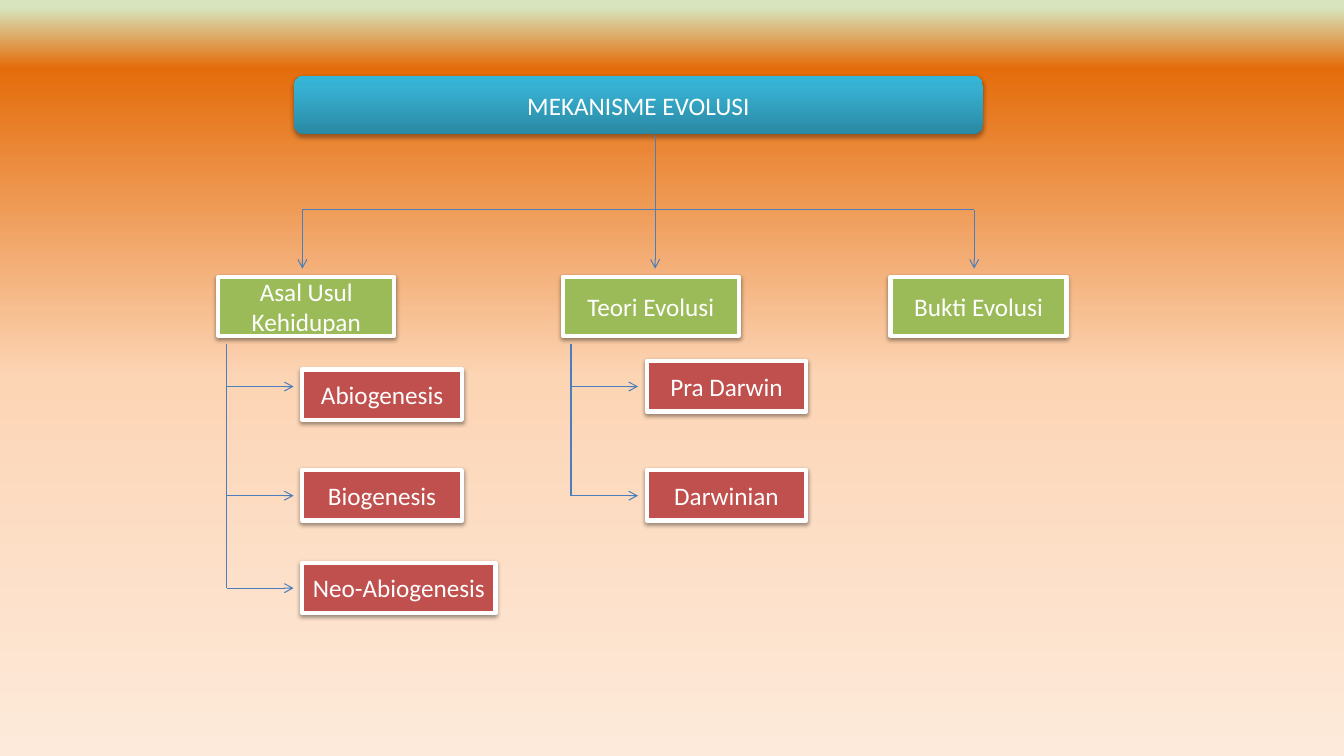
from lxml import etree
from pptx import Presentation
from pptx.dml.color import RGBColor
from pptx.enum.shapes import MSO_CONNECTOR, MSO_SHAPE
from pptx.enum.text import MSO_ANCHOR, PP_ALIGN
from pptx.oxml.ns import qn
from pptx.util import Cm, Pt

ROUNDED = MSO_SHAPE.ROUNDED_RECTANGLE
RECTANGLE = MSO_SHAPE.RECTANGLE
STRAIGHT = MSO_CONNECTOR.STRAIGHT
MIDDLE = MSO_ANCHOR.MIDDLE
CENTER = PP_ALIGN.CENTER

COLORS = {
    "white": "FFFFFF",
    "topic": "9BBB59",
    "subtopic": "C0504D",
    "connector": "4B7EBC",
    "shadow": "000000",
}
BACKGROUND_STOPS = [(0, "D7E4BD"), (1, "D7E4BD"), (9, "E46C0A"), (50, "FCD5B5"), (100, "FDEADA")]
TITLE_STOPS = [(0, "2A88A2"), (80, "37B1D2"), (100, "34B4D6")]
FONT_FORMAT = {"name": "Calibri", "size": Pt(18)}
FRAME_FORMAT = {"word_wrap": True, "vertical_anchor": MIDDLE}

TRUNK_X, TRUNK_TOP, BRANCH_Y, BRANCH_END = 16.51, 3.39, 5.29, 6.77
TOPIC_TOP, TOPIC_WIDTH, TOPIC_HEIGHT = 6.98, 4.44, 1.48
SUBTOPIC_HEIGHT = 1.27
SPINE_OFFSET, ARROW_END_OFFSET, SUBTOPIC_OFFSET = 0.21, 1.9, 2.12
SPINE_TOP = 8.68

TOPICS = [
    ("Asal Usul Kehidupan", 5.5, 7.62, [
        ("Abiogenesis", 9.31, 4.02, 9.74),
        ("Biogenesis", 11.85, 4.02, 12.49),
        ("Neo-Abiogenesis", 14.18, 4.87, 14.82),
    ]),
    ("Teori Evolusi", 14.18, TRUNK_X, [
        ("Pra Darwin", 9.1, 4.02, 9.74),
        ("Darwinian", 11.85, 4.02, 12.49),
    ]),
    ("Bukti Evolusi", 22.44, 24.55, []),
]


def apply_format(target, values):
    for name, value in values.items():
        setattr(target, name, value)


def add_color(parent, color):
    return etree.SubElement(parent, qn("a:srgbClr"), val=color)


def set_gradient(fill, properties, stops, angle):
    fill.gradient()
    gradient = properties.find(".//" + qn("a:gradFill"))
    for child in list(gradient):
        gradient.remove(child)
    stop_list = etree.SubElement(gradient, qn("a:gsLst"))
    for position, color in stops:
        stop = etree.SubElement(stop_list, qn("a:gs"), pos=str(position * 1000))
        add_color(stop, color)
    etree.SubElement(gradient, qn("a:lin"), ang=str(angle * 60000), scaled="0")


def set_shadow(shape, distance, opacity):
    shape.shadow.inherit = False
    effects = shape._element.spPr.find(qn("a:effectLst"))
    shadow = etree.SubElement(
        effects, qn("a:outerShdw"), blurRad=str(Pt(3.1)), dist=str(Pt(distance)),
        dir="5400000", rotWithShape="0")
    color = add_color(shadow, COLORS["shadow"])
    etree.SubElement(color, qn("a:alpha"), val=str(opacity * 1000))


def add_box(slide, kind, text, left, top, width, height):
    shape = slide.shapes.add_shape(kind, Cm(left), Cm(top), Cm(width), Cm(height))
    apply_format(shape.text_frame, FRAME_FORMAT)
    paragraph = shape.text_frame.paragraphs[0]
    paragraph.alignment = CENTER
    run = paragraph.add_run()
    run.text = text
    apply_format(run.font, FONT_FORMAT)
    run.font.color.rgb = RGBColor.from_string(COLORS["white"])
    return shape


def add_title(slide, text):
    shape = add_box(slide, ROUNDED, text, 7.41, 1.91, 17.36, 1.48)
    set_gradient(shape.fill, shape._element.spPr, TITLE_STOPS, 270)
    shape.line.fill.background()
    set_shadow(shape, 1.8, 35)


def add_framed_box(slide, text, color, left, top, width, height):
    shape = add_box(slide, RECTANGLE, text, left, top, width, height)
    shape.fill.solid()
    shape.fill.fore_color.rgb = RGBColor.from_string(COLORS[color])
    shape.line.color.rgb = RGBColor.from_string(COLORS["white"])
    shape.line.width = Pt(3)
    set_shadow(shape, 1.6, 38)


def add_line(slide, start_x, start_y, end_x, end_y, arrow=False):
    connector = slide.shapes.add_connector(
        STRAIGHT, Cm(start_x), Cm(start_y), Cm(end_x), Cm(end_y))
    connector.line.color.rgb = RGBColor.from_string(COLORS["connector"])
    connector.line.width = Pt(0.75)
    if arrow:
        etree.SubElement(connector.line._get_or_add_ln(), qn("a:tailEnd"), type="arrow")
    etree.SubElement(connector._element.spPr, qn("a:effectLst"))


def add_topic(slide, text, left, arrow_x, subtopics):
    add_line(slide, arrow_x, BRANCH_Y, arrow_x, BRANCH_END, arrow=True)
    add_framed_box(slide, text, "topic", left, TOPIC_TOP, TOPIC_WIDTH, TOPIC_HEIGHT)
    spine_x = left + SPINE_OFFSET
    if subtopics:
        add_line(slide, spine_x, SPINE_TOP, spine_x, subtopics[-1][-1])
    for name, top, width, arrow_y in subtopics:
        add_line(slide, spine_x, arrow_y, left + ARROW_END_OFFSET, arrow_y, arrow=True)
        add_framed_box(slide, name, "subtopic", left + SUBTOPIC_OFFSET, top, width, SUBTOPIC_HEIGHT)


def main():
    presentation = Presentation()
    presentation.slide_width = Cm(33.87)
    presentation.slide_height = Cm(19.05)
    slide = presentation.slides.add_slide(presentation.slide_layouts[6])
    set_gradient(slide.background.fill, slide._element, BACKGROUND_STOPS, 90)
    add_title(slide, "MEKANISME EVOLUSI")
    add_line(slide, TRUNK_X, TRUNK_TOP, TRUNK_X, BRANCH_Y)
    add_line(slide, TOPICS[0][2], BRANCH_Y, TOPICS[-1][2], BRANCH_Y)
    for topic in TOPICS:
        add_topic(slide, *topic)
    presentation.save("out.pptx")


if __name__ == "__main__":
    main()
